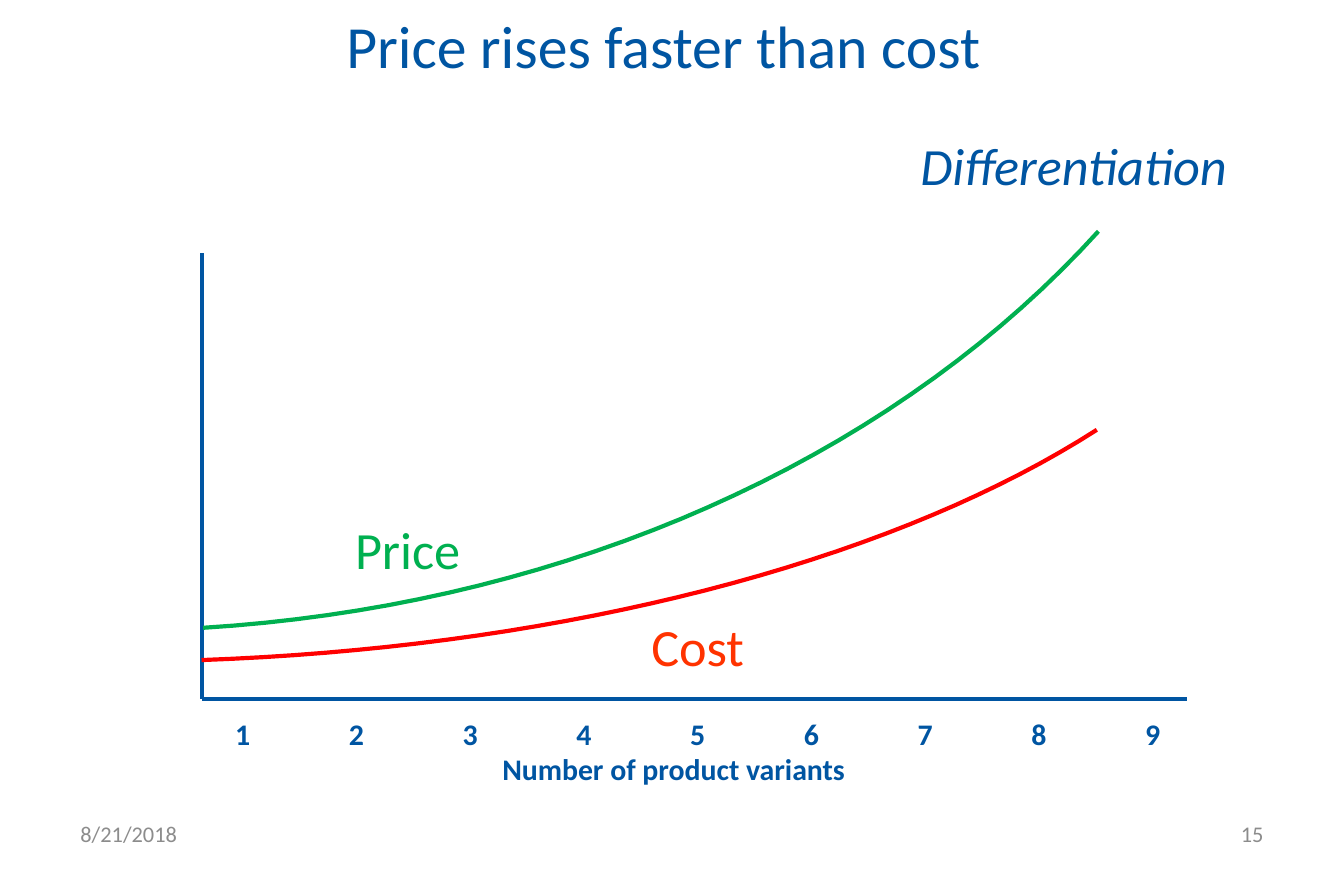
from dataclasses import dataclass
from math import cos, radians, sin

from lxml.etree import SubElement
from pptx import Presentation
from pptx.dml.color import RGBColor
from pptx.enum.shapes import MSO_CONNECTOR, MSO_SHAPE
from pptx.enum.text import MSO_ANCHOR, MSO_AUTO_SIZE, PP_ALIGN
from pptx.oxml.ns import qn
from pptx.util import Cm, Pt


@dataclass(frozen=True)
class Theme:
    font: str = "Calibri"
    blue: str = "0055A2"
    green: str = "00B050"
    red: str = "FF0000"
    orange: str = "FF3300"
    grey: str = "8C8C8C"
    title: int = 32
    label: int = 28
    axis: int = 16
    footer: int = 12
    line: float = 2.25


@dataclass(frozen=True)
class Box:
    left: float
    top: float
    width: float
    height: float

    @property
    def bottom(self):
        return self.top + self.height

    def lengths(self):
        return Cm(self.left), Cm(self.top), Cm(self.width), Cm(self.height)


THEME = Theme()
VARIANTS = 9
CURVE_STEPS = 34
ARC_START, ARC_END = radians(4.5), radians(55)


def style_text(frame, text, size, color, align, bold=False, italic=False):
    frame.text = text
    paragraph = frame.paragraphs[0]
    paragraph.alignment = align
    font = paragraph.runs[0].font
    font.name, font.size = THEME.font, Pt(size)
    font.bold, font.italic = bold, italic
    font.color.rgb = RGBColor.from_string(color)


def style_line(line, color):
    line.color.rgb = RGBColor.from_string(color)
    line.width = Pt(THEME.line)


def add_label(shapes, box, text, size, color, **emphasis):
    """Add a centred one-line text in an unfilled frame that fits its content."""
    label = shapes.add_shape(MSO_SHAPE.ROUNDED_RECTANGLE, *box.lengths())
    label.adjustments[0] = 0
    label.fill.background()
    label.line.fill.background()
    label.shadow.inherit = False
    frame = label.text_frame
    frame.word_wrap = False
    frame.auto_size = MSO_AUTO_SIZE.SHAPE_TO_FIT_TEXT
    frame.vertical_anchor = MSO_ANCHOR.TOP
    style_text(frame, text, size, color, PP_ALIGN.CENTER, **emphasis)


def add_title(slide, box):
    title = slide.shapes.title
    title.left, title.top, title.width, title.height = box.lengths()
    frame = title.text_frame
    frame.auto_size = MSO_AUTO_SIZE.NONE
    frame.vertical_anchor = MSO_ANCHOR.MIDDLE
    style_text(frame, "Price rises faster than cost", THEME.title,
               THEME.blue, PP_ALIGN.LEFT)


def add_footer(slide, box):
    part_width = 5.92
    number_left = box.left + box.width - part_width
    for left, text, align in (
        (box.left, "8/21/2018", PP_ALIGN.LEFT),
        (number_left, "15", PP_ALIGN.RIGHT),
    ):
        part = Box(left, box.top, part_width, box.height)
        frame = slide.shapes.add_textbox(*part.lengths()).text_frame
        frame.word_wrap = True
        frame.vertical_anchor = MSO_ANCHOR.MIDDLE
        style_text(frame, text, THEME.footer, THEME.grey, align)


def add_axes(slide, box):
    axes = slide.shapes.add_group_shape().shapes
    origin = Cm(box.left), Cm(box.bottom)
    price_axis_end = Cm(box.left), Cm(box.top + 0.41)
    variants_axis_end = Cm(box.left + box.width), Cm(box.bottom)
    for start, end in ((price_axis_end, origin), (origin, variants_axis_end)):
        axis = axes.add_connector(MSO_CONNECTOR.STRAIGHT, *start, *end)
        style_line(axis.line, THEME.blue)
        SubElement(axis.element.spPr, qn("a:effectLst"))

    numbers = slide.shapes.add_group_shape().shapes
    for index in range(VARIANTS):
        number_box = Box(box.left + 0.38 + 2.15 * index, box.bottom + 0.18, 0.79, 0.94)
        add_label(numbers, number_box, str(index + 1), THEME.axis, THEME.blue, bold=True)
    add_label(slide.shapes, Box(box.left + 5.38, box.bottom + 0.84, 7.09, 0.94),
              "Number of product variants", THEME.axis, THEME.blue, bold=True)


def add_curve(slide, left, start_y, width, rise, color):
    """Draw an elliptical arc climbing to the right from (left, start_y)."""
    points = []
    for step in range(CURVE_STEPS + 1):
        angle = ARC_START + (ARC_END - ARC_START) * step / CURVE_STEPS
        across = (sin(angle) - sin(ARC_START)) / (sin(ARC_END) - sin(ARC_START))
        up = (cos(ARC_START) - cos(angle)) / (cos(ARC_START) - cos(ARC_END))
        points.append((Cm(left + width * across), Cm(start_y - rise * up)))
    builder = slide.shapes.build_freeform(*points[0])
    builder.add_line_segments(points[1:], close=False)
    curve = builder.convert_to_shape()
    curve.fill.background()
    curve.shadow.inherit = False
    style_line(curve.line, color)


def add_price_cost_plot(slide, box):
    add_label(slide.shapes, Box(box.left + 8.23, box.top + 7.11, 2.29, 1.45),
              "Cost", THEME.label, THEME.orange)
    add_label(slide.shapes, Box(box.left + 2.64, box.top + 5.28, 2.51, 1.45),
              "Price", THEME.label, THEME.green)
    add_axes(slide, box)
    for offset, start_height, rise, color in ((0.03, 1.35, 7.49, THEME.green),
                                              (0, 0.74, 4.35, THEME.red)):
        add_curve(slide, box.left + offset, box.bottom - start_height,
                  16.92, rise, color)


def main():
    presentation = Presentation()
    presentation.slide_width, presentation.slide_height = Cm(25.4), Cm(16.51)
    slide = presentation.slides.add_slide(presentation.slide_layouts[5])
    add_title(slide, Box(6.29, 0, 19.11, 1.68))
    add_footer(slide, Box(1.27, 15.3, 22.86, 0.89))
    add_label(slide.shapes, Box(17.09, 2.39, 6.4, 1.45), "Differentiation",
              THEME.label, THEME.blue, italic=True)
    add_price_cost_plot(slide, Box(3.81, 4.37, 18.62, 8.84))
    presentation.save("out.pptx")


if __name__ == "__main__":
    main()
